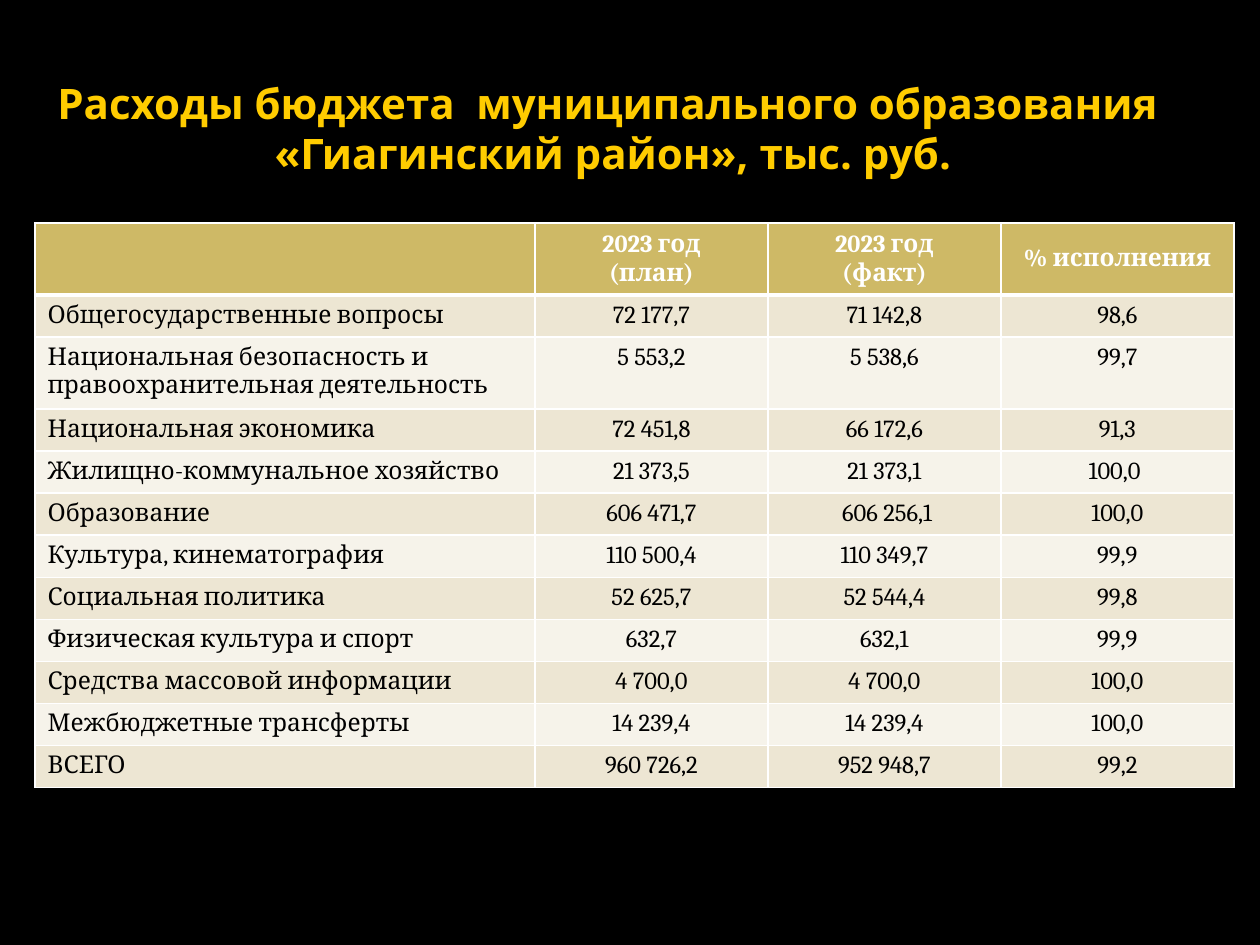
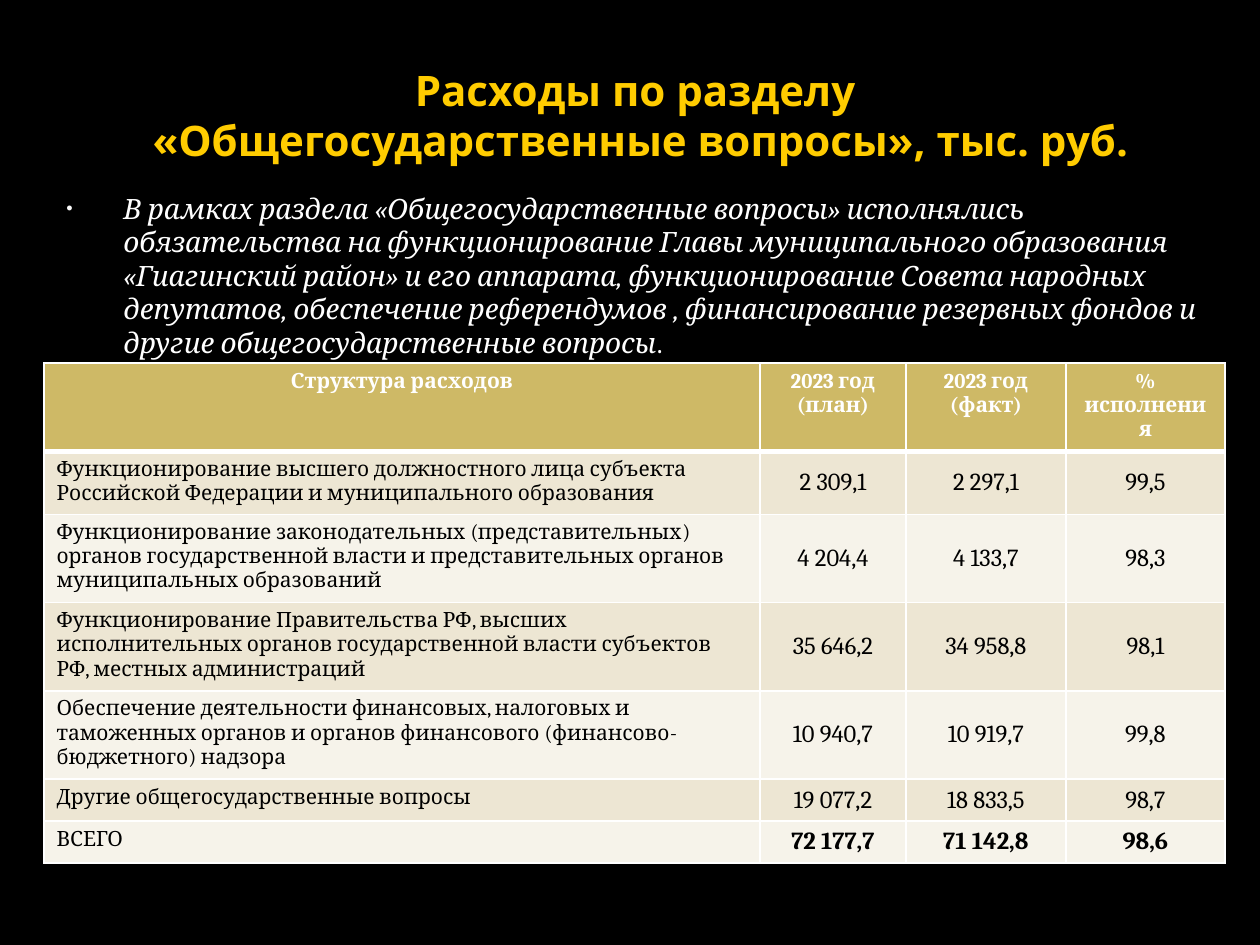
import pptx
import pptx.util
import pptx.dml.color
import pptx.enum.text
import pptx.oxml.ns
from lxml import etree

PX = 914400 // 126
GOLD, WHITE, BLACK = "FFCC00", "FFFFFF", "000000"
HEAD, BANDS = "CEB966", ("EDE6D3", "F6F3EA")
SANS, SERIF = "Open Sans", "Cambria"
ALIGN = pptx.enum.text.PP_ALIGN
ANCHOR = pptx.enum.text.MSO_ANCHOR

BODY = ("В рамках раздела «Общегосударственные вопросы» исполнялись обязательства на функционирование "
        "Главы муниципального образования  «Гиагинский район» и его аппарата, функционирование Совета "
        "народных депутатов, обеспечение референдумов , финансирование резервных фондов и другие "
        "общегосударственные вопросы")

PAGES = [
    {
        "title": "Расходы бюджета  муниципального образования  «Гиагинский район», тыс. руб.",
        "box": (25, 76, 1176, 104),
        "spot": (35, 223),
        "cols": [500, 233, 233, 233],
        "tall": [72, 42, 72] + [42] * 9,
        "sizes": (14, 14, 14),
        "mid": {"head"},
        "bold": False,
        "rows": [
            ("", "2023 год\n(план)", "2023 год\n(факт)", "% исполнения"),
            ("Общегосударственные вопросы", "72 177,7", "71 142,8", "98,6"),
            ("Национальная безопасность и правоохранительная деятельность", "5 553,2", "5 538,6", "99,7"),
            ("Национальная экономика", "72 451,8", "66 172,6", "91,3"),
            ("Жилищно-коммунальное хозяйство", "21 373,5", "21 373,1", "100,0 "),
            ("Образование", "606 471,7", " 606 256,1", "100,0"),
            ("Культура, кинематография", "110 500,4", "110 349,7", "99,9"),
            ("Социальная политика", "52 625,7", "52 544,4", "99,8"),
            ("Физическая культура и спорт", "632,7", "632,1", "99,9"),
            ("Средства массовой информации", "4 700,0", "4 700,0", "100,0"),
            ("Межбюджетные трансферты", "14 239,4", "14 239,4", "100,0"),
            ("ВСЕГО", "960 726,2", "952 948,7", "99,2"),
        ],
    },
    {
        "title": "Расходы по разделу \v«Общегосударственные вопросы», тыс. руб.",
        "box": (35, 66, 1211, 98),
        "body": BODY,
        "spot": (44, 363),
        "cols": [716, 146, 160, 159],
        "tall": [85, 62, 87, 87, 85, 41, 41],
        "sizes": (12, 12, 14),
        "mid": {"value"},
        "bold": True,
        "rows": [
            ("Структура расходов", "2023 год\n(план)", "2023 год (факт)", "% исполнения"),
            ("Функционирование высшего должностного лица субъекта Российской Федерации и муниципального "
             "образования", "2 309,1", "2 297,1", "99,5"),
            ("Функционирование законодательных (представительных) органов государственной власти и "
             "представительных органов муниципальных образований", "4 204,4", "4 133,7", "98,3"),
            ("Функционирование Правительства РФ, высших исполнительных органов государственной власти "
             "субъектов РФ, местных администраций", "35 646,2", "34 958,8", "98,1"),
            ("Обеспечение деятельности финансовых, налоговых и таможенных органов и органов финансового "
             "(финансово-бюджетного) надзора", "10 940,7", "10 919,7", "99,8"),
            ("Другие общегосударственные вопросы", "19 077,2", "18 833,5", "98,7"),
            ("ВСЕГО", "72 177,7", "71 142,8", "98,6"),
        ],
    },
]


def tint(code):
    return pptx.dml.color.RGBColor.from_string(code)


def style(font, face, size, color, bold=False, slant=False):
    font.name, font.size = face, pptx.util.Pt(size)
    font.color.rgb = tint(color)
    font.bold, font.italic = bold, slant


def node(root, tag, **attrs):
    return etree.SubElement(root, pptx.oxml.ns.qn("a:" + tag), attrs)


def add_box(slide, box):
    frame = slide.shapes.add_textbox(*[n * PX for n in box]).text_frame
    frame.word_wrap = True
    return frame


def add_title(slide, text, box):
    frame = add_box(slide, box)
    frame.vertical_anchor = ANCHOR.MIDDLE
    para = frame.paragraphs[0]
    para.text = text
    para.alignment = ALIGN.CENTER
    for run in para.runs:
        style(run.font, SANS, 24, GOLD, True)


def add_body(slide, text):
    para = add_box(slide, (35, 185, 1191, 169)).paragraphs[0]
    props = para._p.get_or_add_pPr()
    props.set("marL", str(76 * PX))
    props.set("indent", str(-57 * PX))
    node(node(props, "buClr"), "srgbClr", val="F9F9F9")
    node(props, "buSzPct", val="65000")
    node(props, "buFont", typeface="Arial")
    node(props, "buChar", char="•")
    for part, slant in ((text, True), (".", False)):
        run = para.add_run()
        run.text = part
        style(run.font, SERIF, 16, WHITE, False, slant)


def edge(cell, low):
    props = cell._tc.get_or_add_tcPr()
    for tag, wide in (("lnL", 1), ("lnR", 1), ("lnT", 1), ("lnB", low)):
        line = node(props, tag, w=str(pptx.util.Pt(wide)))
        node(node(line, "solidFill"), "srgbClr", val=WHITE)


def fill_cell(cell, text, r, c, page):
    kind = "head" if r == 0 else "value" if c else "label"
    last = r == len(page["rows"]) - 1
    total = page["bold"] and last and kind == "value"
    size = page["sizes"][("head", "label", "value").index(kind)]
    edge(cell, 3 if kind == "head" else 1)
    cell.fill.solid()
    cell.fill.fore_color.rgb = tint(HEAD if kind == "head" else BANDS[(r - 1) % 2])
    if kind in page["mid"] and not total:
        cell.vertical_anchor = ANCHOR.MIDDLE
    cell.text_frame.text = text
    for para in cell.text_frame.paragraphs:
        para.alignment = ALIGN.LEFT if kind == "label" else ALIGN.CENTER
        style(para.font, SERIF, size, BLACK)
        for run in para.runs:
            style(run.font, SERIF, size, WHITE if kind == "head" else BLACK, kind == "head" or total)


def add_grid(slide, page):
    rows, cols, tall = page["rows"], page["cols"], page["tall"]
    area = (*page["spot"], sum(cols), sum(tall))
    grid = slide.shapes.add_table(len(rows), len(cols), *[n * PX for n in area]).table
    grid.horz_banding = False
    for col, wide in zip(grid.columns, cols):
        col.width = wide * PX
    for r, row in enumerate(rows):
        grid.rows[r].height = tall[r] * PX
        for c, text in enumerate(row):
            fill_cell(grid.cell(r, c), text, r, c, page)


def main():
    deck = pptx.Presentation()
    deck.slide_width, deck.slide_height = 1260 * PX, 945 * PX
    for page in PAGES:
        slide = deck.slides.add_slide(deck.slide_layouts[6])
        slide.background.fill.solid()
        slide.background.fill.fore_color.rgb = tint(BLACK)
        add_title(slide, page["title"], page["box"])
        if "body" in page:
            add_body(slide, page["body"])
        add_grid(slide, page)
    deck.save("out.pptx")


if __name__ == "__main__":
    main()
